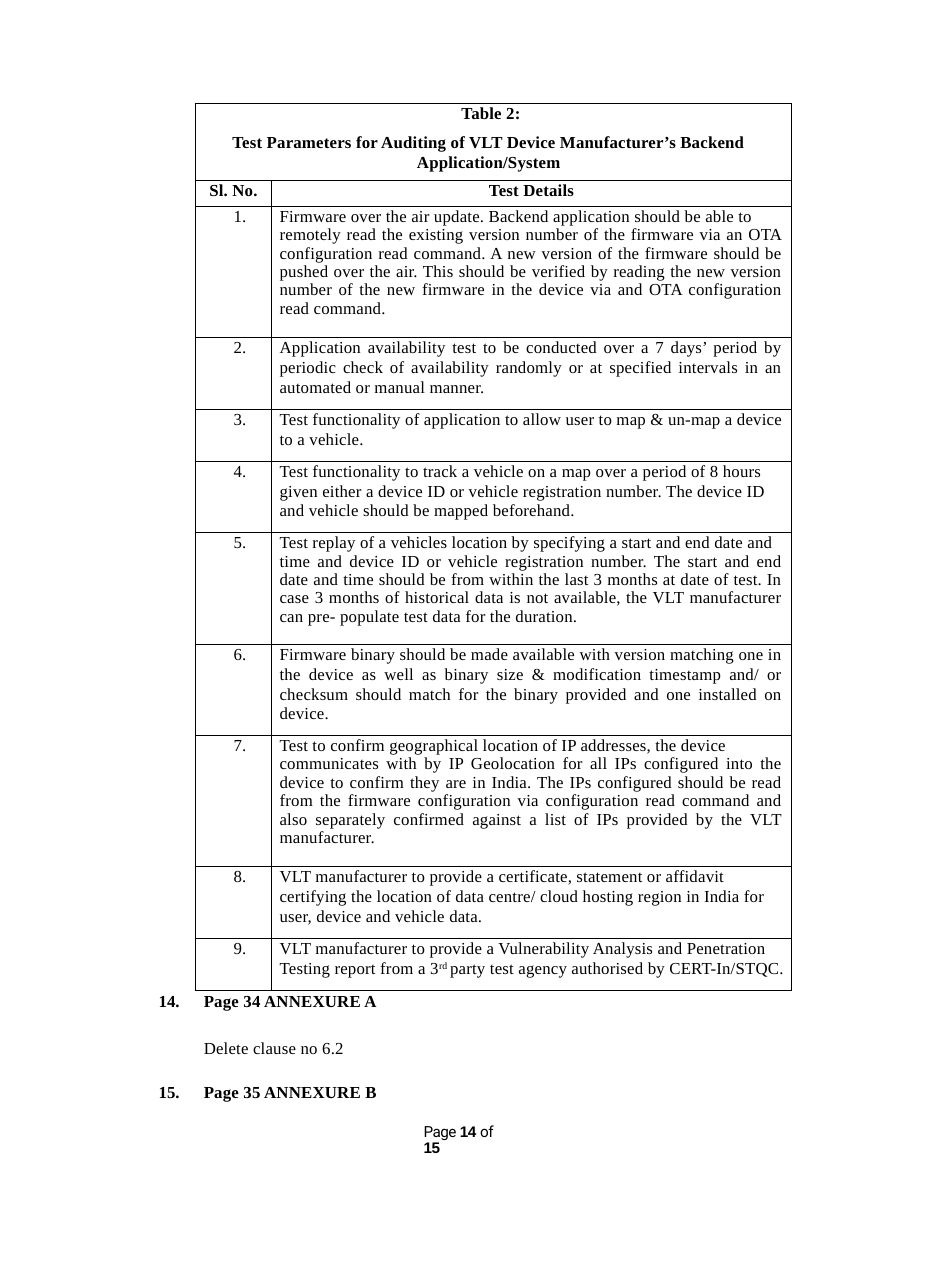
from lxml import etree
from pptx import Presentation
from pptx.dml.color import RGBColor
from pptx.enum.text import MSO_AUTO_SIZE, PP_ALIGN
from pptx.oxml.ns import qn
from pptx.util import Cm, Pt

BLACK = RGBColor(0, 0, 0)
SERIF = "Times New Roman"
LEFT, CENTER, JUSTIFY = PP_ALIGN.LEFT, PP_ALIGN.CENTER, PP_ALIGN.JUSTIFY
NO_AUTOFIT = MSO_AUTO_SIZE.NONE
FIRST = {"line": Pt(12.8)}
TIGHT = {"align": JUSTIFY, "line": 0.98, "before": 0.1, "right": 0.2}
EXACT = {"line": Pt(13), "before": 0.3}
EVEN = {"align": JUSTIFY, "line": Pt(13), "before": 0.2, "right": 0.2}

# Row height in cm, then the paragraphs with their format; ^ encloses a superscript
TESTS = [
    (3.02, [("Firmware over the air update. Backend application should be able to", FIRST),
            ("remotely read the existing version number of the firmware via an OTA "
             "configuration read command. A new version of the firmware should be "
             "pushed over the air. This should be verified by reading the new version "
             "number of the new firmware in the device via and OTA configuration "
             "read command.", TIGHT)]),
    (1.66, [("Application availability test to be conducted over a 7 days’ period by "
             "periodic check of availability randomly or at specified intervals in an "
             "automated or manual manner.", EVEN)]),
    (1.19, [("Test functionality of application to allow user to map & un-map a device "
             "to a vehicle.", EXACT)]),
    (1.65, [("Test functionality to track a vehicle on a map over a period of 8 hours "
             "given either a device ID or vehicle registration number. The device ID",
             EXACT),
            ("and vehicle should be mapped beforehand.", FIRST)]),
    (2.57, [("Test replay of a vehicles location by specifying a start and end date and",
             FIRST),
            ("time and device ID or vehicle registration number. The start and end date "
             "and time should be from within the last 3 months at date of test. In case "
             "3 months of historical data is not available, the VLT manufacturer can "
             "pre- populate test data for the duration.", TIGHT)]),
    (2.11, [("Firmware binary should be made available with version matching one in "
             "the device as well as binary size & modification timestamp and/ or "
             "checksum should match for the binary provided and one installed on "
             "device.", EVEN)]),
    (3.02, [("Test to confirm geographical location of IP addresses, the device", FIRST),
            ("communicates with by IP Geolocation for all IPs configured into the "
             "device to confirm they are in India. The IPs configured should be read "
             "from the firmware configuration via configuration read command and "
             "also separately confirmed against a list of IPs provided by the VLT "
             "manufacturer.", TIGHT)]),
    (1.66, [("VLT manufacturer to provide a certificate, statement or affidavit "
             "certifying the location of data centre/ cloud hosting region in India for",
             EXACT),
            ("user, device and vehicle data.", FIRST)]),
    (1.19, [("VLT manufacturer to provide a Vulnerability Analysis and Penetration "
             "Testing report from a 3^rd ^party test agency authorised by "
             "CERT-In/STQC.", EXACT)]),
]


def add_run(p, text, size=11, font=SERIF, bold=False, spc=10, raised=False):
    r = p.add_run()
    r.text = text
    r.font.size, r.font.name, r.font.bold = Pt(size), font, bold
    r.font.color.rgb = BLACK
    rPr = r.font._element
    rPr.set("spc", str(spc))
    if raised:
        rPr.set("baseline", "30000")


def add_paragraph(tf, text, align=LEFT, line=Pt(12.9), before=0, indent=0, hang=0, right=0,
                  bold=False):
    """Fill the empty first paragraph of the frame, or append one; indents in cm."""
    p = tf.paragraphs[0]
    if p.runs:
        p = tf.add_paragraph()
    p.alignment, p.line_spacing = align, line
    p.space_before, p.space_after = Pt(before), Pt(0)
    pPr = p._p.get_or_add_pPr()
    for name, length in (("marL", indent), ("marR", right), ("indent", -hang)):
        pPr.set(name, str(Cm(length)))
    for i, part in enumerate(text.split("^")):
        add_run(p, part, bold=bold, raised=i % 2 == 1)
    return p


prs = Presentation()
prs.slide_width, prs.slide_height = Cm(21.59), Cm(29.7)
s = prs.slides.add_slide(prs.slide_layouts[1])
title = s.shapes.title
title._element.getparent().remove(title._element)

# Test parameter table
heights = [1.78, 0.59] + [height for height, _ in TESTS]
table = s.shapes.add_table(len(heights), 2, Cm(4.5), Cm(2.39),
                           Cm(13.75), Cm(sum(heights))).table
table.first_row = table.horz_banding = False
for column, width in zip(table.columns, (1.77, 11.98)):
    column.width = Cm(width)
for row, height in zip(table.rows, heights):
    row.height = Cm(height)
for cell in table.iter_cells():
    cell.margin_left = cell.margin_right = cell.margin_top = cell.margin_bottom = 0
    tcPr = cell._tc.get_or_add_tcPr()
    for side in ("a:lnL", "a:lnR", "a:lnT", "a:lnB"):
        ln = etree.SubElement(tcPr, qn(side), w=str(Pt(0.5)))
        fill = etree.SubElement(ln, qn("a:solidFill"))
        etree.SubElement(fill, qn("a:srgbClr"), val=str(BLACK))
    cell.fill.background()

heading = table.cell(0, 0)
heading.merge(table.cell(0, 1))
add_paragraph(heading.text_frame, "Table 2:", align=CENTER, right=0.1, bold=True)
add_paragraph(heading.text_frame, "Test Parameters for Auditing of VLT Device "
              "Manufacturer’s Backend Application/System",
              align=CENTER, line=Pt(13), before=6, right=0.2, bold=True)
for cell, label in zip(table.rows[1].cells, ("Sl. No.", "Test Details")):
    add_paragraph(cell.text_frame, label, align=CENTER, bold=True)
for number, (_, paragraphs) in enumerate(TESTS, 1):
    add_paragraph(table.cell(number + 1, 0).text_frame, f"{number}.", indent=0.89)
    for text, style in paragraphs:
        add_paragraph(table.cell(number + 1, 1).text_frame, text, indent=0.18, **style)

# Numbered amendments
body = s.placeholders[1]
body.left, body.top, body.width, body.height = Cm(3.65), Cm(22.85), Cm(5.6), Cm(2.6)
tf = body.text_frame
tf.auto_size, tf.word_wrap = NO_AUTOFIT, True
tf.margin_left = tf.margin_right = tf.margin_top = tf.margin_bottom = 0
for text, start, before in (("Page 34 ANNEXURE A", 14, 1.2),
                            ("Delete clause no 6.2", None, 17.2),
                            ("Page 35 ANNEXURE B", 15, 15.8)):
    p = add_paragraph(tf, text, line=1.0, before=before, indent=1.05,
                      hang=1.04 if start else 0, bold=bool(start))
    pPr = p._p.get_or_add_pPr()
    if start:
        etree.SubElement(pPr, qn("a:buFont"), typeface=SERIF)
        etree.SubElement(pPr, qn("a:buAutoNum"), type="arabicPeriod", startAt=str(start))
    else:
        etree.SubElement(pPr, qn("a:buNone"))

# Page number
tf = s.shapes.add_textbox(Cm(9.77), Cm(25.91), Cm(2), Cm(0.8)).text_frame
tf.word_wrap = True
tf.margin_left = tf.margin_right = tf.margin_top = tf.margin_bottom = 0
p = tf.paragraphs[0]
p.line_spacing = Pt(10.8)
for text, font, bold in (("Page ", "Roboto", False), ("14 ", "Arial", True),
                         ("of ", "Roboto", False), ("15", "Arial", True)):
    add_run(p, text, size=10, font=font, bold=bold, spc=-30)

prs.save("out.pptx")
